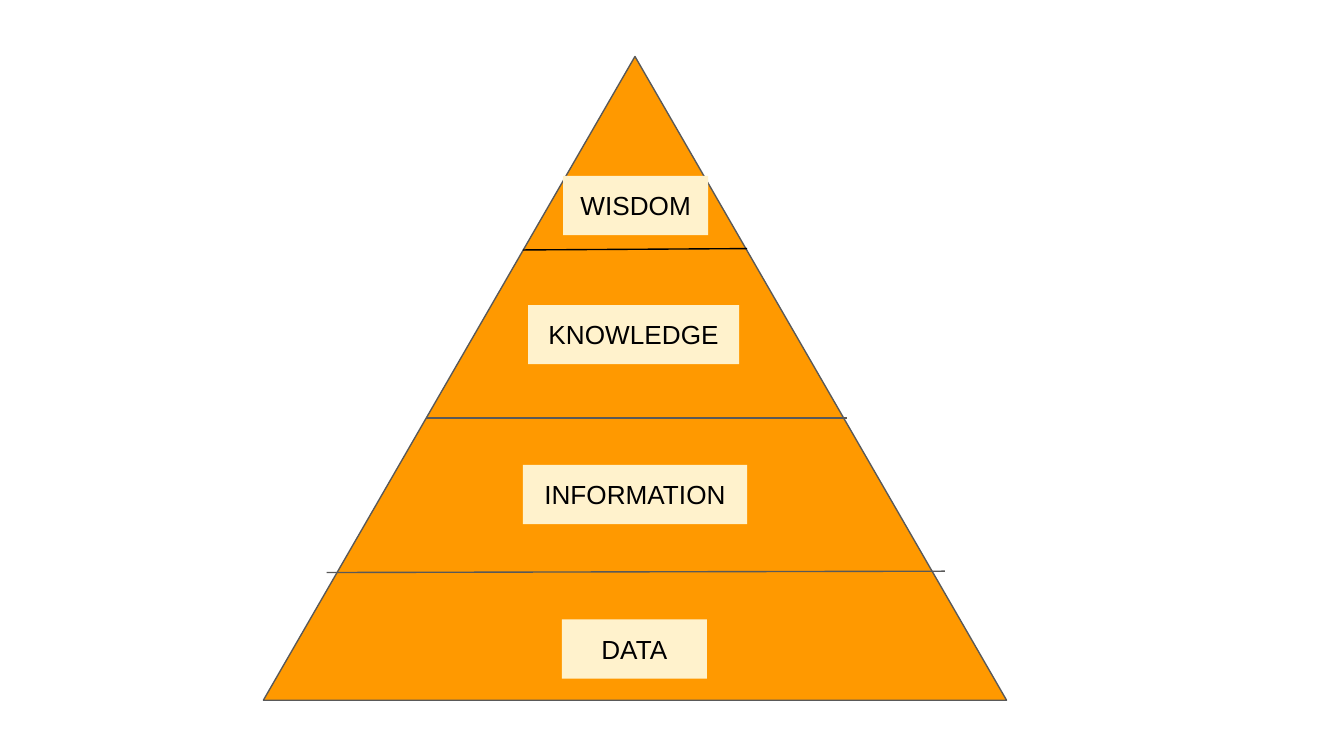
from lxml import etree
from pptx import Presentation
from pptx.dml.color import RGBColor
from pptx.enum.shapes import MSO_CONNECTOR, MSO_SHAPE
from pptx.enum.text import MSO_ANCHOR, MSO_AUTO_SIZE, PP_ALIGN
from pptx.oxml.ns import qn
from pptx.util import Inches, Pt

TRIANGLE = MSO_SHAPE.ISOSCELES_TRIANGLE
RECTANGLE = MSO_SHAPE.RECTANGLE
STRAIGHT = MSO_CONNECTOR.STRAIGHT
CENTER = PP_ALIGN.CENTER
TOP = MSO_ANCHOR.TOP
GROW = MSO_AUTO_SIZE.SHAPE_TO_FIT_TEXT

SLIDE_WIDTH = Inches(10)
SLIDE_HEIGHT = SLIDE_WIDTH * 9 // 16

COLORS = {
    "pyramid": "FF9900",
    "label": "FFF2CC",
    "outline": "595959",
    "text": "000000",
}
LABEL_HEIGHT = 0.44
LABEL_FRAME = {
    "margin_left": Inches(0.1),
    "margin_right": Inches(0.1),
    "margin_top": Inches(0.1),
    "margin_bottom": Inches(0.1),
    "vertical_anchor": TOP,
    "word_wrap": True,
    "auto_size": GROW,
}
LABEL_FONT = {"name": "Arial", "size": Pt(14)}

# Offsets from the pyramid's top left corner
# Level name, left, top, width
LEVELS = [
    ("WISDOM", 2.23, 0.89, 1.08),
    ("KNOWLEDGE", 1.97, 1.85, 1.57),
    ("INFORMATION", 1.93, 3.04, 1.67),
    ("DATA", 2.22, 4.19, 1.08),
]
# Start x, start y, end x, end y, colour
DIVIDERS = [
    (1.93, 1.44, 3.60, 1.43, "text"),
    (1.21, 2.69, 4.34, 2.69, "outline"),
    (0.47, 3.84, 5.07, 3.83, "outline"),
]


def color(name):
    return RGBColor.from_string(COLORS[name])


def set_line(line, color_name):
    line.color.rgb = color(color_name)
    line.width = Pt(0.75)


def set_attributes(target, values):
    for name, value in values.items():
        setattr(target, name, value)


def add_filled_shape(slide, preset, left, top, width, height, fill):
    shape = slide.shapes.add_shape(
        preset, Inches(left), Inches(top), Inches(width), Inches(height))
    shape.shadow.inherit = False
    shape.fill.solid()
    shape.fill.fore_color.rgb = color(fill)
    return shape


def add_divider(slide, start_x, start_y, end_x, end_y, color_name):
    divider = slide.shapes.add_connector(
        STRAIGHT, Inches(start_x), Inches(start_y), Inches(end_x), Inches(end_y))
    set_line(divider.line, color_name)
    etree.SubElement(divider._element.spPr, qn("a:effectLst"))


def add_label(slide, name, left, top, width):
    label = add_filled_shape(
        slide, RECTANGLE, left, top, width, LABEL_HEIGHT, "label")
    label.line.fill.background()
    set_attributes(label.text_frame, LABEL_FRAME)
    paragraph = label.text_frame.paragraphs[0]
    paragraph.alignment = CENTER
    run = paragraph.add_run()
    run.text = name
    set_attributes(run.font, LABEL_FONT)
    run.font.color.rgb = color("text")


def add_pyramid(slide, left, top, width, height):
    """Draw the triangle, the lines between its levels and their labels."""
    pyramid = add_filled_shape(slide, TRIANGLE, left, top, width, height, "pyramid")
    set_line(pyramid.line, "outline")
    for x1, y1, x2, y2, color_name in DIVIDERS:
        add_divider(slide, left + x1, top + y1, left + x2, top + y2, color_name)
    for name, x, y, label_width in LEVELS:
        add_label(slide, name, left + x, top + y, label_width)


def main():
    presentation = Presentation()
    presentation.slide_width = SLIDE_WIDTH
    presentation.slide_height = SLIDE_HEIGHT
    slide = presentation.slides.add_slide(presentation.slide_layouts[6])
    add_pyramid(slide, 1.96, 0.42, 5.53, 4.79)
    presentation.save("out.pptx")


if __name__ == "__main__":
    main()
